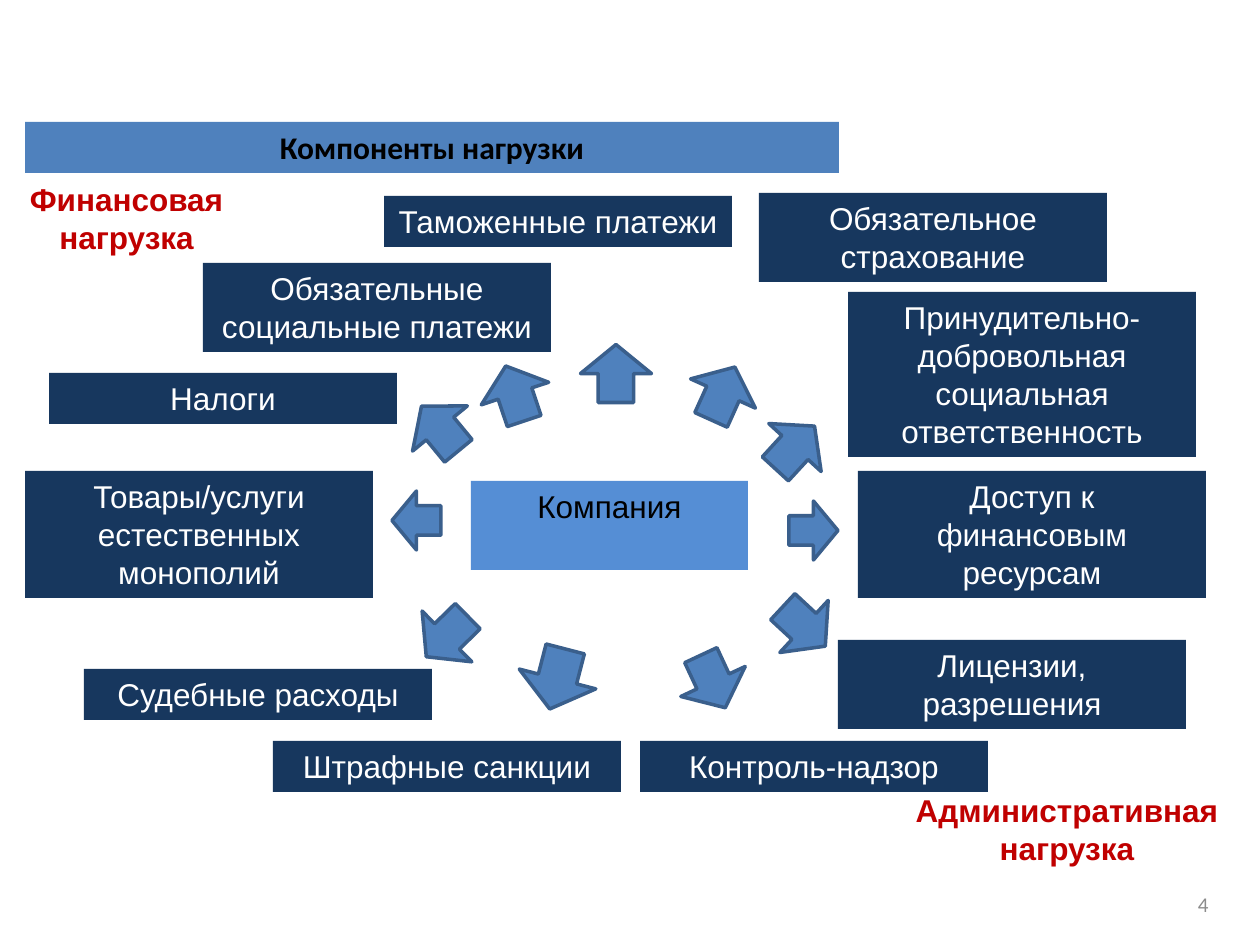
from pptx import Presentation
from pptx.dml.color import RGBColor as RGB
from pptx.enum.shapes import MSO_SHAPE as Kind
from pptx.enum.text import MSO_ANCHOR as Anchor, MSO_AUTO_SIZE as Fit, PP_ALIGN as Align
from pptx.util import Pt

PX = 914400 / 126
BLUE = RGB(0x4F, 0x81, 0xBD)
EDGE = RGB(0x3A, 0x5F, 0x8C)
LIGHT = RGB(0x55, 0x8E, 0xD5)
NAVY = RGB(0x17, 0x37, 0x5E)
RED = RGB(0xC0, 0x00, 0x00)
GRAY = RGB(0x8C, 0x8C, 0x8C)
BLACK = RGB(0, 0, 0)
WHITE = RGB(255, 255, 255)

BOX_W, LINE_H, ONE_H = 348, 38, 51

# Burden boxes: text, left, top, lines
BOXES = [
    ("Таможенные платежи", 384, 196, 1),
    ("Обязательное страхование", 759, 193, 2),
    ("Принудительно- добровольная социальная ответственность", 848, 292, 4),
    ("Доступ к финансовым ресурсам", 858, 471, 3),
    ("Лицензии, разрешения", 838, 640, 2),
    ("Контроль-надзор", 640, 741, 1),
    ("Штрафные санкции", 273, 741, 1),
    ("Судебные расходы", 84, 669, 1),
    ("Товары/услуги естественных монополий", 25, 471, 3),
    ("Налоги", 49, 373, 1),
    ("Обязательные социальные платежи", 203, 263, 2),
]

# Slanted arrows: left, top, turn
SLANTS = [
    (587, 338, 270), (694, 358, 294.3), (766, 412, 312.5), (775, 591, 42.9),
    (684, 646, 65), (418, 601, 135.6), (411, 393, 230.5), (486, 358, 251.5),
]


def emu(*vals):
    return [round(v * PX) for v in vals]


def write(shape, text, *, size=18, font="Arial", color=BLACK, bold=False,
          align=Align.CENTER, anchor=Anchor.TOP, fit=Fit.SHAPE_TO_FIT_TEXT):
    frame = shape.text_frame
    frame.text = text
    frame.word_wrap = True
    frame.auto_size = fit
    frame.vertical_anchor = anchor
    para = frame.paragraphs[0]
    para.alignment = align
    face = para.runs[0].font
    face.size, face.name, face.bold = Pt(size), font, bold
    face.color.rgb = color


class Deck:
    def __init__(self):
        self.prs = Presentation()
        self.prs.slide_width, self.prs.slide_height = emu(1260, 945)
        self.slide = self.prs.slides.add_slide(self.prs.slide_layouts[5])

    def title(self, text, *area):
        head = self.slide.shapes.title
        head.left, head.top, head.width, head.height = emu(*area)
        head.fill.solid()
        head.fill.fore_color.rgb = BLUE
        write(head, text, font="Calibri", bold=True, fit=Fit.NONE)

    def shape(self, kind, area, fill):
        item = self.slide.shapes.add_shape(kind, *emu(*area))
        item.shadow.inherit = False
        item.fill.solid()
        item.fill.fore_color.rgb = fill
        item.line.fill.background()
        return item

    def box(self, text, *area, fill=NAVY, **style):
        write(self.shape(Kind.RECTANGLE, area, fill), text, **style)

    def arrow(self, kind, *area, turn=0):
        item = self.shape(kind, area, BLUE)
        item.line.color.rgb = EDGE
        item.line.width = Pt(2)
        item.rotation = turn

    def label(self, text, *area, **style):
        write(self.slide.shapes.add_textbox(*emu(*area)), text, **style)


def main():
    deck = Deck()
    deck.title("Компоненты нагрузки", 25, 122, 814, ONE_H)

    # Company in the centre
    deck.box("Компания", 471, 481, 277, 89, fill=LIGHT, fit=Fit.NONE)

    # Burdens around it
    for text, left, top, lines in BOXES:
        high = ONE_H + LINE_H * (lines - 1)
        deck.box(text, left, top, BOX_W, high, color=WHITE)

    # Arrows outward
    for left, top, turn in SLANTS:
        deck.arrow(Kind.RIGHT_ARROW, left, top, 58, 71, turn=turn)
    deck.arrow(Kind.RIGHT_ARROW, 789, 501, 49, 59)
    deck.arrow(Kind.LEFT_ARROW, 392, 491, 49, 59)
    deck.arrow(Kind.DOWN_ARROW, 518, 648, 79, 62, turn=14.5)

    # Group labels and slide number
    deck.label("Финансовая нагрузка", 10, 174, 233, 89, color=RED, bold=True)
    deck.label("Административная нагрузка", 898, 785, 338, 89, color=RED, bold=True)
    deck.label("4", 927, 879, 294, 50, size=12, font="Calibri", color=GRAY,
               align=Align.RIGHT, anchor=Anchor.MIDDLE, fit=Fit.NONE)

    deck.prs.save("out.pptx")


if __name__ == "__main__":
    main()
